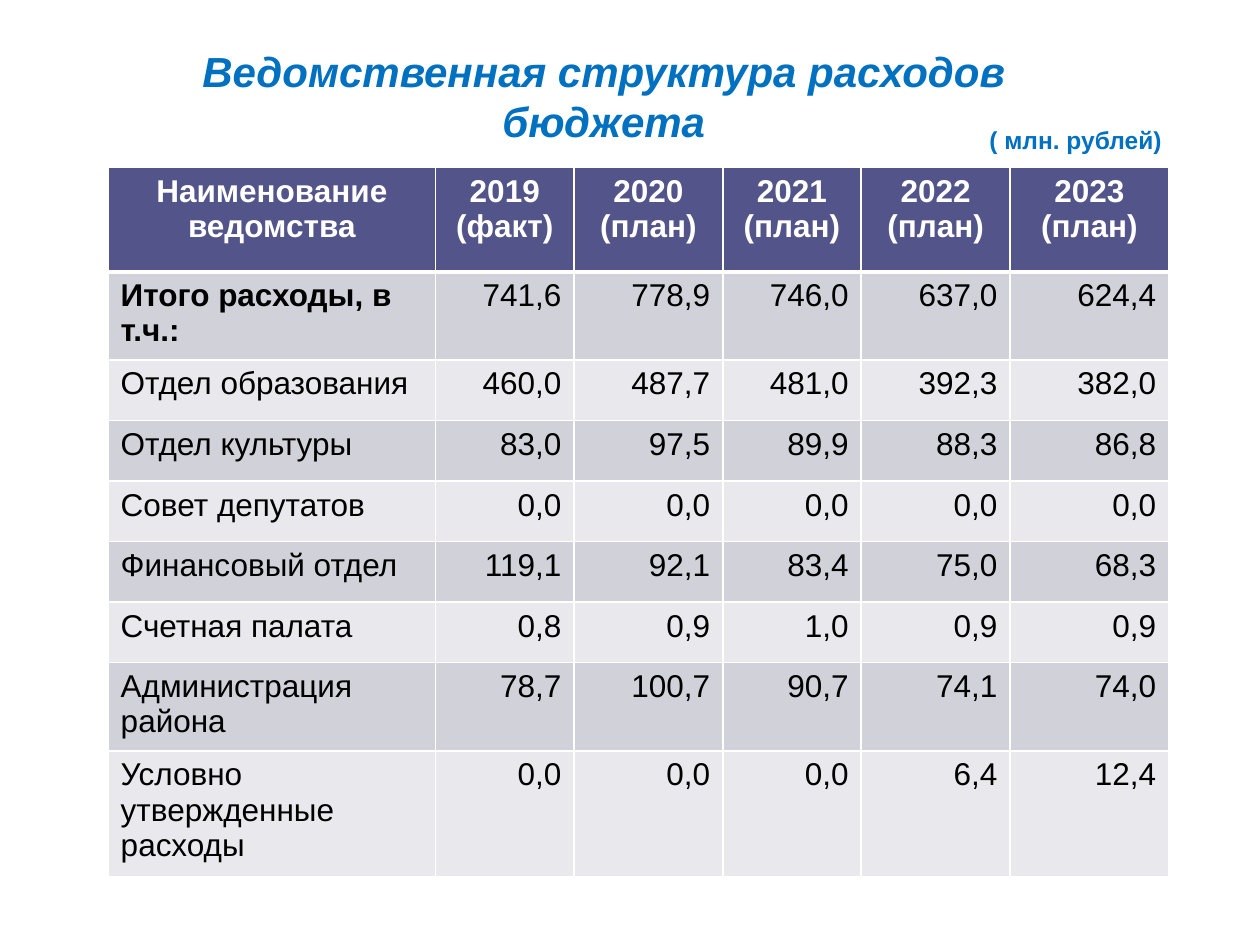
"""Build a slide with a table of budget spending by department."""
from lxml import etree
from pptx import Presentation
from pptx.dml.color import RGBColor
from pptx.enum import text
from pptx.oxml import ns
from pptx.util import Cm, Pt

TITLE = "Ведомственная структура расходов бюджета"
UNITS = "( млн. рублей)"
HEADER = ["Наименование ведомства", "2019\n(факт)", "2020\n(план)",
          "2021\n(план)", "2022\n(план)", "2023\n(план)"]
ROWS = [
    ("Итого расходы, в т.ч.:", "741,6", "778,9", "746,0", "637,0", "624,4"),
    ("Отдел образования", "460,0", "487,7", "481,0", "392,3", "382,0"),
    ("Отдел культуры", "83,0", "97,5", "89,9", "88,3", "86,8"),
    ("Совет депутатов", "0,0", "0,0", "0,0", "0,0", "0,0"),
    ("Финансовый отдел", "119,1", "92,1", "83,4", "75,0", "68,3"),
    ("Счетная палата", "0,8", "0,9", "1,0", "0,9", "0,9"),
    ("Администрация района", "78,7", "100,7", "90,7", "74,1", "74,0"),
    ("Условно утвержденные расходы", "0,0", "0,0", "0,0", "6,4", "12,4"),
]
COL_WIDTHS = [6.6, 2.79, 3, 2.79, 3, 3.2]
HEADER_HEIGHT, ROW_HEIGHT = 2.1, 1.22

FONT = "Arial"
BLUE = RGBColor(0x00, 0x70, 0xC0)
WHITE = RGBColor(0xFF, 0xFF, 0xFF)
BLACK = RGBColor(0x00, 0x00, 0x00)
VIOLET = RGBColor(0x53, 0x54, 0x8A)
BANDS = [RGBColor(0xD1, 0xD1, 0xDA), RGBColor(0xE9, 0xE9, 0xED)]
LEFT, CENTER, RIGHT = (text.PP_ALIGN.LEFT, text.PP_ALIGN.CENTER,
                       text.PP_ALIGN.RIGHT)


def write(tf, content, size, color, align, bold=True, italic=False):
    tf.text = content
    for p in tf.paragraphs:
        p.alignment = align
        for r in p.runs:
            r.font.name, r.font.size = FONT, Pt(size)
            r.font.bold, r.font.italic = bold, italic
            r.font.color.rgb = color


def add_label(s, box, content, size, align, italic=False):
    tf = s.shapes.add_textbox(*map(Cm, box)).text_frame
    tf.word_wrap = True
    write(tf, content, size, BLUE, align, italic=italic)


def add_border(cell, side, width):
    ln = etree.SubElement(cell._tc.get_or_add_tcPr(), ns.qn(f"a:ln{side}"),
                          w=str(Pt(width)))
    fill = etree.SubElement(ln, ns.qn("a:solidFill"))
    etree.SubElement(fill, ns.qn("a:srgbClr"), val=str(WHITE))


def fill_cell(cell, content, row, col):
    for side in "LRTB":
        thick = (row, side) in ((0, "B"), (1, "T"))
        add_border(cell, side, 3 if thick else 1)
    cell.fill.solid()
    if row == 0:
        cell.fill.fore_color.rgb = VIOLET
        write(cell.text_frame, content, 18, WHITE, CENTER)
    else:
        cell.fill.fore_color.rgb = BANDS[(row - 1) % 2]
        write(cell.text_frame, content, 18, BLACK, RIGHT if col else LEFT,
              bold=(row, col) == (1, 0))


def add_budget_table(s):
    heights = [HEADER_HEIGHT] + [ROW_HEIGHT] * len(ROWS)
    table = s.shapes.add_table(
        len(heights), len(COL_WIDTHS), Cm(2.18), Cm(3.38),
        Cm(sum(COL_WIDTHS)), Cm(sum(heights))).table
    for column, width in zip(table.columns, COL_WIDTHS):
        column.width = Cm(width)
    for row, height in zip(table.rows, heights):
        row.height = Cm(height)
    for i, values in enumerate([HEADER, *ROWS]):
        for j, value in enumerate(values):
            fill_cell(table.cell(i, j), value, i, j)


def main():
    prs = Presentation()
    prs.slide_width, prs.slide_height = Cm(25.4), Cm(19.05)
    s = prs.slides.add_slide(prs.slide_layouts[6])
    add_label(s, (2.77, 0.79, 18.8, 2.31), TITLE, 24, CENTER, italic=True)
    add_budget_table(s)
    add_label(s, (17.07, 2.39, 6.6, 0.86), UNITS, 14, RIGHT)
    prs.save("out.pptx")


if __name__ == "__main__":
    main()
